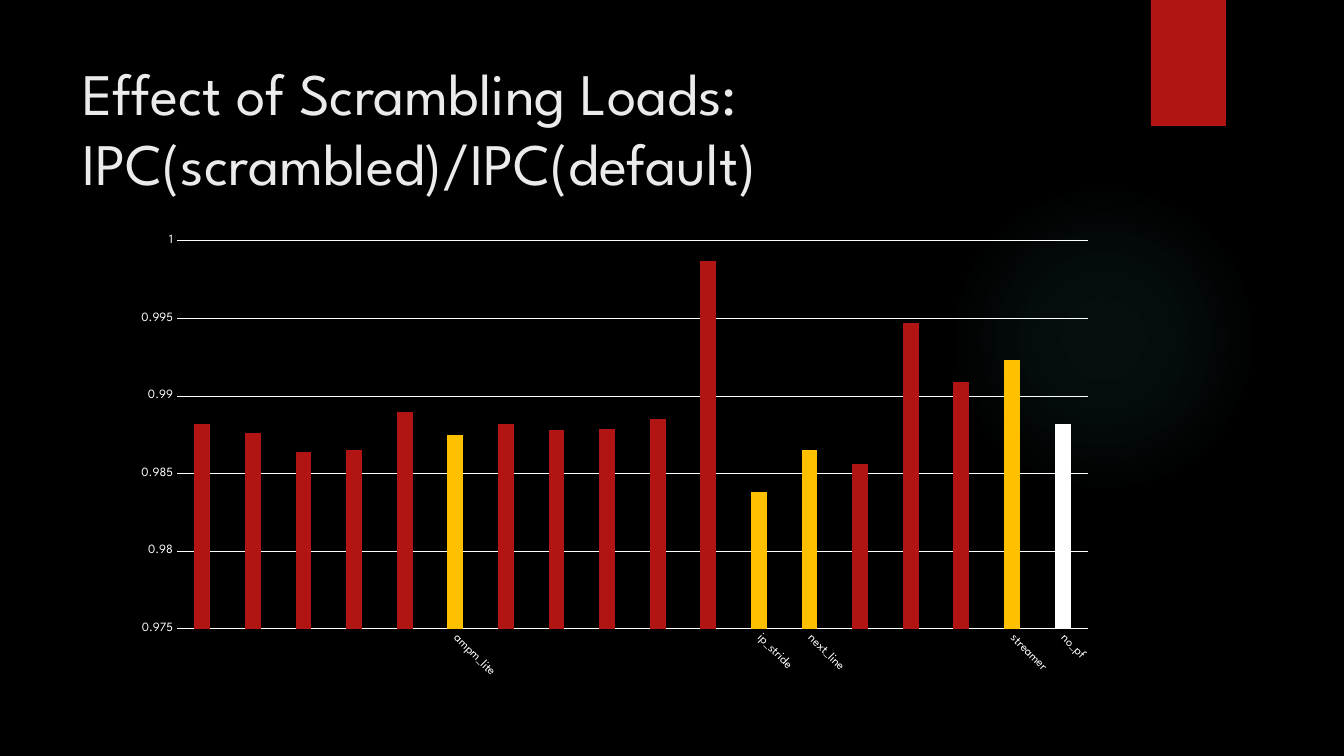
"""Build the slide on the effect of scrambling loads on IPC."""
from dataclasses import dataclass
from typing import NamedTuple

from lxml import etree
from pptx import Presentation
from pptx.chart.data import CategoryChartData
from pptx.dml.color import RGBColor
from pptx.enum.chart import XL_CHART_TYPE as Chart, XL_TICK_MARK as Tick
from pptx.enum.shapes import MSO_SHAPE as Shape
from pptx.enum.text import MSO_ANCHOR as Anchor, MSO_AUTO_SIZE as Auto, PP_ALIGN as Align
from pptx.oxml import parse_xml
from pptx.oxml.ns import nsdecls, qn
from pptx.util import Emu, Pt

EMU_PER_PX = 914400 / 100.8


@dataclass(frozen=True)
class Theme:
    font: str = "League Spartan"
    back: str = "000000"
    title: str = "EBEBEB"
    red: str = "B01513"
    gold: str = "FFC000"
    white: str = "FFFFFF"
    glow: str = "50B9C1"
    title_size: int = 42
    chart_size: int = 10
    axis_size: int = 9
    line: float = 0.75


@dataclass(frozen=True)
class Box:
    left: int
    top: int
    width: int
    height: int

    def emu(self) -> list[Emu]:
        return [px(n) for n in (self.left, self.top, self.width, self.height)]


class Bar(NamedTuple):
    value: float
    color: str
    label: str = ""


T = Theme()
SLIDE = Box(0, 0, 1344, 756)
GLOW = Box(949, 184, 310, 310)
TAB = Box(1151, 0, 75, 126)
TITLE = Box(72, 50, 1037, 154)
CHART = Box(122, 226, 986, 463)
PLOT = Box(177, 241, 911, 388)
GLOW_STOPS = [(0, 7), (36, 6), (69, 0)]
BARS = [
    *(Bar(v, T.red) for v in (0.9882, 0.9876, 0.9864, 0.9865, 0.989)),
    Bar(0.9875, T.gold, "ampm_lite"),
    *(Bar(v, T.red) for v in (0.9882, 0.9878, 0.9879, 0.9885, 0.9987)),
    Bar(0.9838, T.gold, "ip_stride"),
    Bar(0.9865, T.gold, "next_line"),
    *(Bar(v, T.red) for v in (0.9856, 0.9947, 0.9909)),
    Bar(0.9923, T.gold, "streamer"),
    Bar(0.9882, T.white, "no_pf"),
]


def px(n: int) -> Emu:
    return Emu(round(n * EMU_PER_PX))


def rgb(color: str) -> RGBColor:
    return RGBColor.from_string(color)


def paint(fill, color: str) -> None:
    fill.solid()
    fill.fore_color.rgb = rgb(color)


def style_font(font, size: int, color: str) -> None:
    font.name, font.size, font.bold = T.font, Pt(size), False
    font.color.rgb = rgb(color)


def add_text(tf, text: str, *, size: int, color: str, align=Align.LEFT) -> None:
    tf.text = text
    p = tf.paragraphs[0]
    p.alignment = align
    for r in p.runs:
        style_font(r.font, size, color)


def add_block(s, kind, box: Box, color: str):
    sp = s.shapes.add_shape(kind, *box.emu())
    sp.shadow.inherit = False
    paint(sp.fill, color)
    sp.line.fill.background()
    return sp


def add_glow(s) -> None:
    sp = add_block(s, Shape.OVAL, GLOW, T.glow)
    stops = "".join(
        f'<a:gs pos="{pos * 1000}"><a:srgbClr val="{T.glow}">'
        f'<a:alpha val="{alpha * 1000}"/></a:srgbClr></a:gs>'
        for pos, alpha in GLOW_STOPS
    )
    grad = parse_xml(
        f'<a:gradFill {nsdecls("a")}><a:gsLst>{stops}</a:gsLst><a:path path="circle">'
        '<a:fillToRect l="50000" t="50000" r="50000" b="50000"/></a:path></a:gradFill>'
    )
    solid = sp._element.spPr.find(qn("a:solidFill"))
    solid.getparent().replace(solid, grad)


def add_title(s) -> None:
    sp = s.shapes.title
    sp.left, sp.top, sp.width, sp.height = TITLE.emu()
    tf = sp.text_frame
    tf.word_wrap, tf.auto_size, tf.vertical_anchor = True, Auto.NONE, Anchor.MIDDLE
    add_text(tf, "Effect of Scrambling Loads:\vIPC(scrambled)/IPC(default)",
             size=T.title_size, color=T.title)
    s.shapes._spTree.append(sp._element)


def style_axis(axis, line) -> None:
    axis.major_tick_mark = axis.minor_tick_mark = Tick.NONE
    style_font(axis.tick_labels.font, T.axis_size, T.white)
    line.color.rgb = rgb(T.white)
    line.width = Pt(T.line)


def place_plot(chart) -> None:
    area = chart._chartSpace.chart.plotArea
    for old in area.findall(qn("c:layout")):
        area.remove(old)
    layout = etree.Element(qn("c:layout"))
    manual = etree.SubElement(layout, qn("c:manualLayout"))
    settings = {
        "layoutTarget": "inner", "xMode": "edge", "yMode": "edge",
        "x": (PLOT.left - CHART.left) / CHART.width,
        "y": (PLOT.top - CHART.top) / CHART.height,
        "w": PLOT.width / CHART.width,
        "h": PLOT.height / CHART.height,
    }
    for tag, value in settings.items():
        etree.SubElement(manual, qn(f"c:{tag}")).set("val", str(value))
    area.insert(0, layout)


def add_bars(s) -> None:
    data = CategoryChartData()
    data.categories = [bar.label for bar in BARS]
    data.add_series("Series 1", [bar.value for bar in BARS])
    chart = s.shapes.add_chart(Chart.COLUMN_CLUSTERED, *CHART.emu(), data).chart
    chart.has_title = chart.has_legend = False
    style_font(chart.font, T.chart_size, T.white)
    place_plot(chart)

    cats, vals = chart.category_axis, chart.value_axis
    style_axis(cats, cats.format.line)
    cats._element.find(qn("c:txPr")).find(qn("a:bodyPr")).set("rot", "2700000")
    vals.has_major_gridlines = True
    style_axis(vals, vals.major_gridlines.format.line)
    vals.format.line.fill.background()
    vals.minimum_scale, vals.maximum_scale, vals.major_unit = 0.975, 1, 0.005

    plot = chart.plots[0]
    plot.vary_by_categories = False
    plot.gap_width, plot.overlap = 219, -27
    series = plot.series[0]
    paint(series.format.fill, T.red)
    for i, bar in enumerate(BARS):
        if bar.color != T.red:
            paint(series.points[i].format.fill, bar.color)


def main() -> None:
    prs = Presentation()
    prs.slide_width, prs.slide_height = px(SLIDE.width), px(SLIDE.height)
    s = prs.slides.add_slide(prs.slide_layouts.get_by_name("Title Only"))
    paint(s.background.fill, T.back)
    add_glow(s)
    add_block(s, Shape.RECTANGLE, TAB, T.red)
    add_title(s)
    add_bars(s)
    prs.save("out.pptx")


if __name__ == "__main__":
    main()
